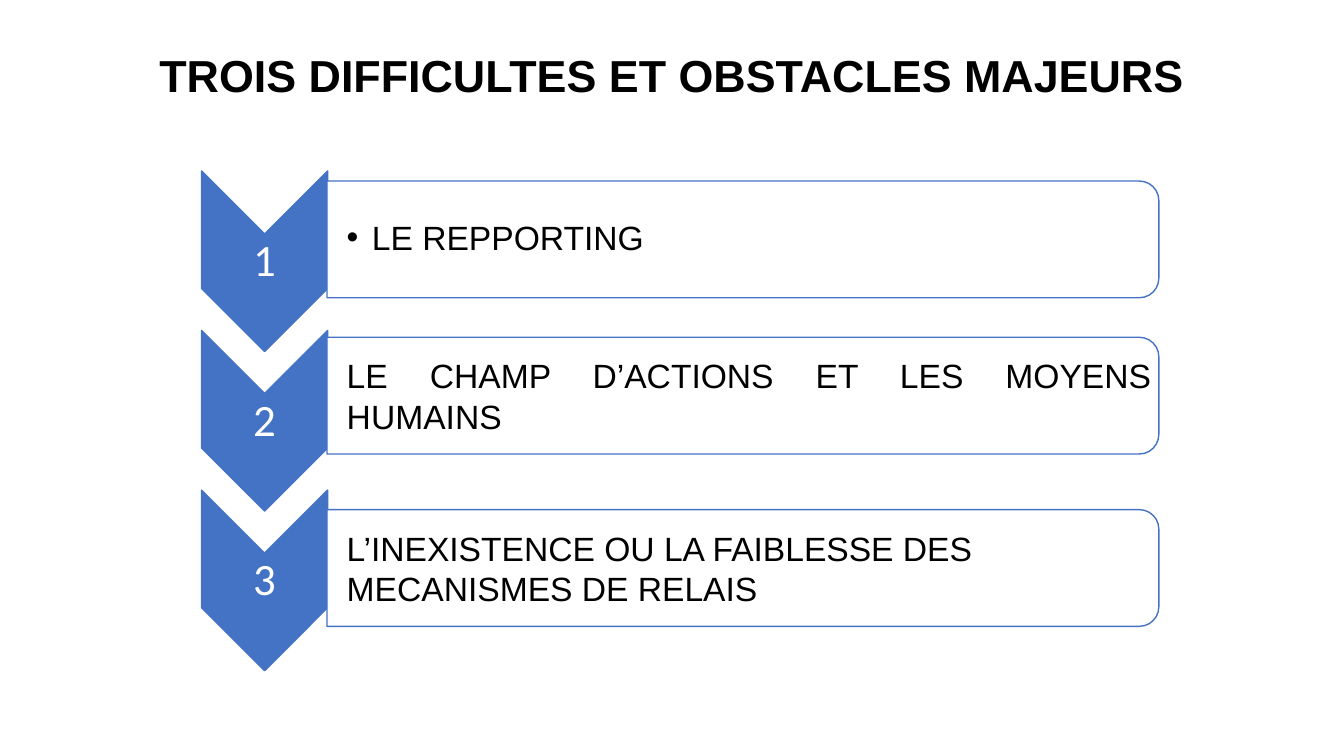
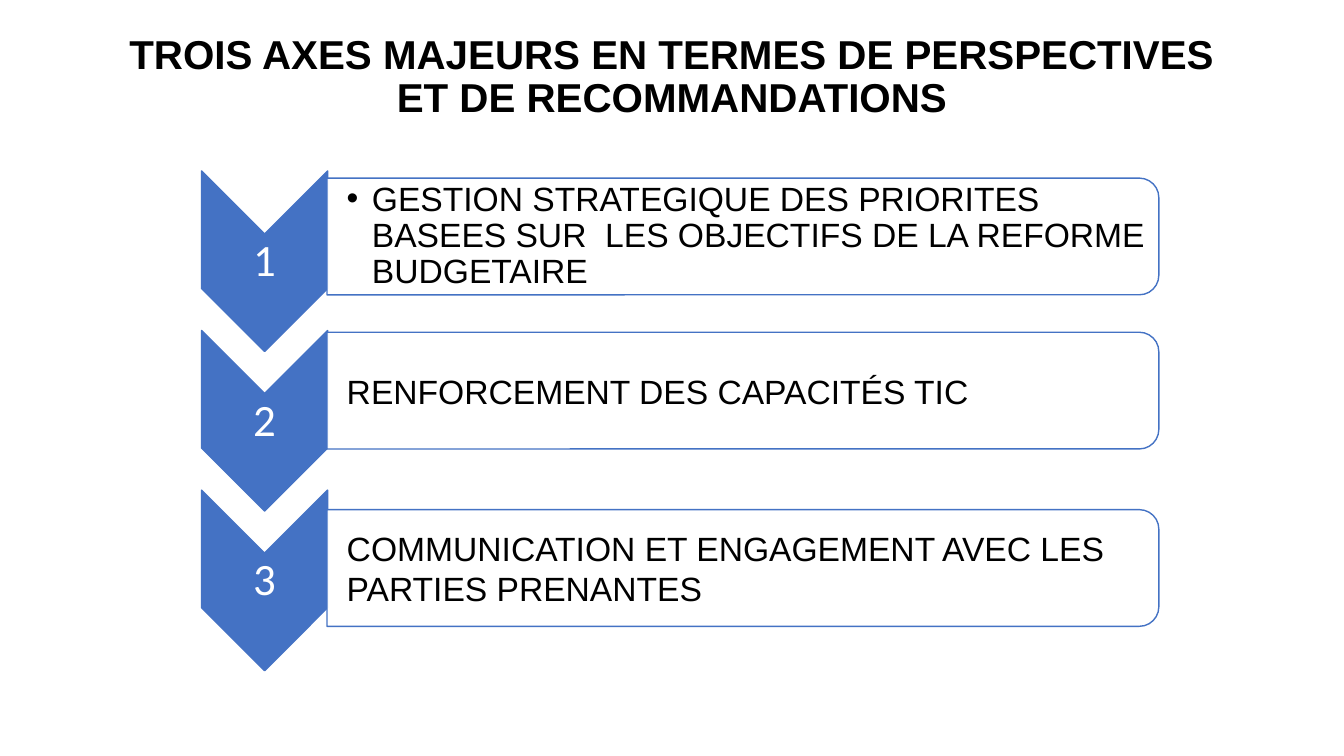
from lxml.etree import SubElement
from pptx import Presentation
from pptx.dml.color import RGBColor
from pptx.enum.shapes import MSO_SHAPE
from pptx.enum.text import MSO_ANCHOR, MSO_AUTO_SIZE, PP_ALIGN
from pptx.oxml.ns import qn
from pptx.util import Inches, Pt

BLUE = RGBColor(0x44, 0x72, 0xC4)
WHITE = RGBColor(0xFF, 0xFF, 0xFF)
BLACK = RGBColor(0, 0, 0)

WIDTH, HEIGHT = Inches(13.33), Inches(7.5)
COL, ROW = WIDTH / 160, HEIGHT / 90
STEP_X, STEP_Y, STEP_PITCH = 31.5, 31.1, 19
BAR_LEFT, BAR_W, BAR_H = 38.94, 99, 13.9


def write(tf, text, size=24, font="Arial", color=BLACK, bold=False,
          align=PP_ALIGN.LEFT, spacing=1.0, bullet=False):
    tf.word_wrap = True
    tf.auto_size = MSO_AUTO_SIZE.NONE
    tf.vertical_anchor = MSO_ANCHOR.MIDDLE
    p = tf.paragraphs[0]
    p.alignment, p.line_spacing = align, spacing
    r = p.add_run()
    r.text = text
    r.font.size, r.font.name, r.font.bold = Pt(size), font, bold
    r.font.color.rgb = color
    if bullet:
        p.level = 1
        pPr = p._p.get_or_add_pPr()
        pPr.set("marL", str(Inches(0.25)))
        pPr.set("indent", str(-Inches(0.25)))
        SubElement(pPr, qn("a:buFont")).set("typeface", "Arial")
        SubElement(pPr, qn("a:buChar")).set("char", "•")


class Deck:
    """Holds the presentation style and the slide being filled."""

    def __init__(self):
        self.prs = Presentation()
        self.prs.slide_width, self.prs.slide_height = WIDTH, HEIGHT

    def box(self, x, y, w, h):
        return [int(v) for v in (x * COL, y * ROW, w * COL, h * ROW)]

    def slide(self, title, size):
        self.s = self.prs.slides.add_slide(self.prs.slide_layouts[5])
        sp = self.s.shapes.title
        sp.left, sp.top, sp.width, sp.height = self.box(11, 4.8, 138, 9)
        write(sp.text_frame, title, size=size, bold=True,
              align=PP_ALIGN.CENTER, spacing=0.9)

    def turned(self, kind, cx, cy, w, h, fill):
        sp = self.s.shapes.add_shape(
            kind, *self.box(cx - w / 2, cy - h / 2, w, h))
        sp.rotation = 90
        sp.shadow.inherit = False
        sp.fill.solid()
        sp.fill.fore_color.rgb = fill
        sp.line.color.rgb = BLUE
        sp.line.width = Pt(1)
        return sp

    def label(self, x, cy, w, h, text, inset=0.02, **fmt):
        tf = self.s.shapes.add_textbox(
            *self.box(x, cy - h / 2, w, h)).text_frame
        tf.margin_left = Inches(inset)
        tf.margin_right = tf.margin_top = tf.margin_bottom = Inches(0.02)
        write(tf, text, **fmt)

    def step(self, number):
        cy = STEP_Y + (number - 1) * STEP_PITCH
        self.turned(MSO_SHAPE.CHEVRON, STEP_X, cy, 21.5, 15, BLUE)
        self.label(24, cy + 0.1, 15, 6.5, str(number), size=32, font="Calibri",
                   color=WHITE, align=PP_ALIGN.CENTER, spacing=0.9)

    def bar(self, cy, text, **fmt):
        sp = self.turned(MSO_SHAPE.ROUND_2_SAME_RECTANGLE,
                         BAR_LEFT + BAR_W / 2, cy, BAR_H, BAR_W, WHITE)
        fill = sp._element.spPr.find(qn("a:solidFill"))
        SubElement(fill[0], qn("a:alpha")).set("val", "90000")
        self.label(39, cy, 98.3, 12.6, text, inset=0.19, **fmt)


FORMATS = [dict(bullet=True, spacing=0.9), dict(align=PP_ALIGN.JUSTIFY), {}]
SLIDES = [
    ("TROIS DIFFICULTES ET OBSTACLES MAJEURS", 32, [
        (28.5, "LE REPPORTING"),
        (47.1, "LE CHAMP D’ACTIONS ET LES MOYENS HUMAINS"),
        (67.62, "L’INEXISTENCE OU LA FAIBLESSE DES MECANISMES DE RELAIS")]),
    ("TROIS AXES MAJEURS EN TERMES DE PERSPECTIVES ET DE RECOMMANDATIONS",
     28.8, [
         (28.15, "GESTION STRATEGIQUE DES PRIORITES BASEES SUR  LES OBJECTIFS "
                 "DE LA REFORME BUDGETAIRE"),
         (46.5, "RENFORCEMENT DES CAPACITÉS TIC"),
         (67.62, "COMMUNICATION ET ENGAGEMENT AVEC LES PARTIES PRENANTES")]),
]

deck = Deck()
for title, size, items in SLIDES:
    deck.slide(title, size)
    for number, ((cy, text), fmt) in enumerate(zip(items, FORMATS), 1):
        deck.step(number)
        deck.bar(cy, text, **fmt)
deck.prs.save("out.pptx")
